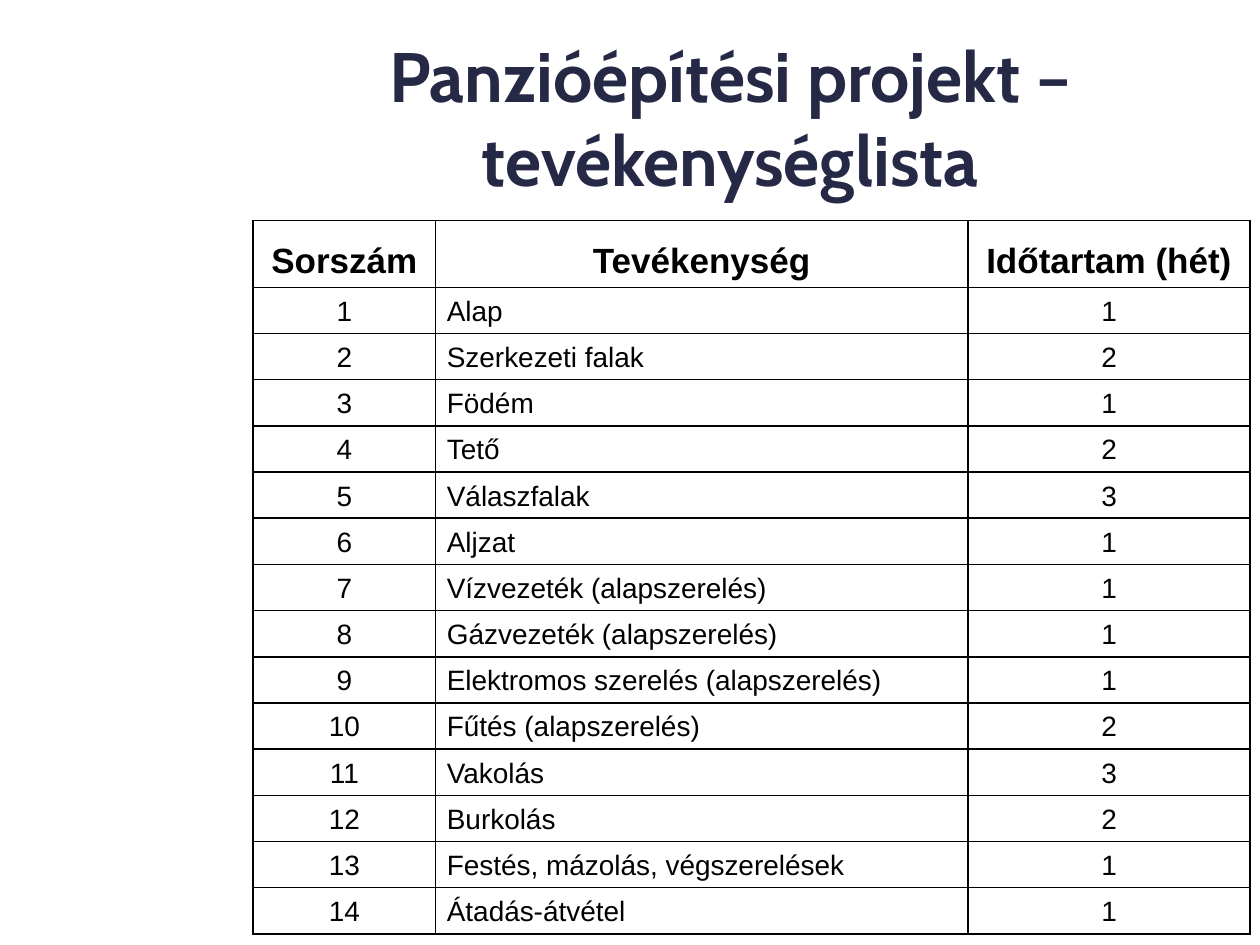
from lxml.etree import SubElement
from pptx import Presentation
from pptx.dml.color import RGBColor
from pptx.enum.text import MSO_ANCHOR as ANCHOR, MSO_AUTO_SIZE as AUTO, PP_ALIGN as ALIGN
from pptx.oxml.ns import qn
from pptx.util import Pt

COLORS = {"title": "252946", "text": "000000", "border": "000000", "cell": "FFFFFF"}
HEADER = ["Sorszám", "Tevékenység", "Időtartam (hét)"]
ACTIVITIES = [
    ("Alap", 1),
    ("Szerkezeti falak", 2),
    ("Födém", 1),
    ("Tető", 2),
    ("Válaszfalak", 3),
    ("Aljzat", 1),
    ("Vízvezeték (alapszerelés)", 1),
    ("Gázvezeték (alapszerelés)", 1),
    ("Elektromos szerelés (alapszerelés)", 1),
    ("Fűtés (alapszerelés)", 2),
    ("Vakolás", 3),
    ("Burkolás", 2),
    ("Festés, mázolás, végszerelések", 1),
    ("Átadás-átvétel", 1),
]


class SlideBuilder:
    def __init__(self, s):
        self.s = s

    def format_text(self, p, text, align, color, **font):
        p.alignment = align
        r = p.add_run()
        r.text = text
        for name, value in font.items():
            setattr(r.font, name, value)
        r.font.color.rgb = RGBColor.from_string(COLORS[color])

    def title(self, text, left, top, width, height):
        sp = self.s.shapes.title
        box = {"left": left, "top": top, "width": width, "height": height}
        for name, value in box.items():
            setattr(sp, name, Pt(value))
        tf = sp.text_frame
        for name, value in {"word_wrap": True, "auto_size": AUTO.NONE,
                            "vertical_anchor": ANCHOR.MIDDLE}.items():
            setattr(tf, name, value)
        self.format_text(tf.paragraphs[0], text, ALIGN.CENTER, "title",
                         name="Cabin", size=Pt(40), bold=True)

    def borders(self, cell):
        tc_pr = cell._tc.get_or_add_tcPr()
        for side in ("lnL", "lnR", "lnT", "lnB"):
            ln = SubElement(tc_pr, qn(f"a:{side}"), w=str(Pt(1)))
            fill = SubElement(ln, qn("a:solidFill"))
            SubElement(fill, qn("a:srgbClr"), val=COLORS["border"])

    def cell(self, cell, text, align, size, bold):
        self.borders(cell)
        cell.fill.solid()
        cell.fill.fore_color.rgb = RGBColor.from_string(COLORS["cell"])
        for name, value in {"margin_left": Pt(6.5), "margin_right": Pt(6.5),
                            "margin_top": Pt(3.6), "margin_bottom": Pt(3.6),
                            "vertical_anchor": ANCHOR.BOTTOM}.items():
            setattr(cell, name, value)
        p = cell.text_frame.paragraphs[0]
        p_pr = p._p.get_or_add_pPr()
        p_pr.set("marL", str(Pt(27)))
        p_pr.set("indent", str(-Pt(27)))
        self.format_text(p, text, align, "text", name="Arial", size=Pt(size), bold=bold)

    def table(self, rows, left, top, widths, header_height, row_height):
        heights = [header_height] + [row_height] * (len(rows) - 1)
        table = self.s.shapes.add_table(
            len(rows), len(widths), Pt(left), Pt(top),
            Pt(sum(widths)), Pt(sum(heights))).table
        for column, width in zip(table.columns, widths):
            column.width = Pt(width)
        for i, (row, height) in enumerate(zip(rows, heights)):
            table.rows[i].height = Pt(height)
            is_header = i == 0
            for j, text in enumerate(row):
                align = ALIGN.LEFT if j == 1 and not is_header else ALIGN.CENTER
                self.cell(table.cell(i, j), text, align, 20 if is_header else 16, is_header)


def main():
    prs = Presentation()
    prs.slide_width, prs.slide_height = Pt(720), Pt(540)
    builder = SlideBuilder(prs.slides.add_slide(prs.slide_layouts[5]))
    builder.title("Panzióépítési projekt – tevékenységlista", 150.5, 21.6, 533.5, 111.6 - 21.6)
    rows = [HEADER] + [(str(number), name, str(weeks))
                       for number, (name, weeks) in enumerate(ACTIVITIES, 1)]
    builder.table(rows, 144.7, 126, [104.2, 304.2, 161.3], 38.2, 26.4)
    prs.save("out.pptx")


if __name__ == "__main__":
    main()
